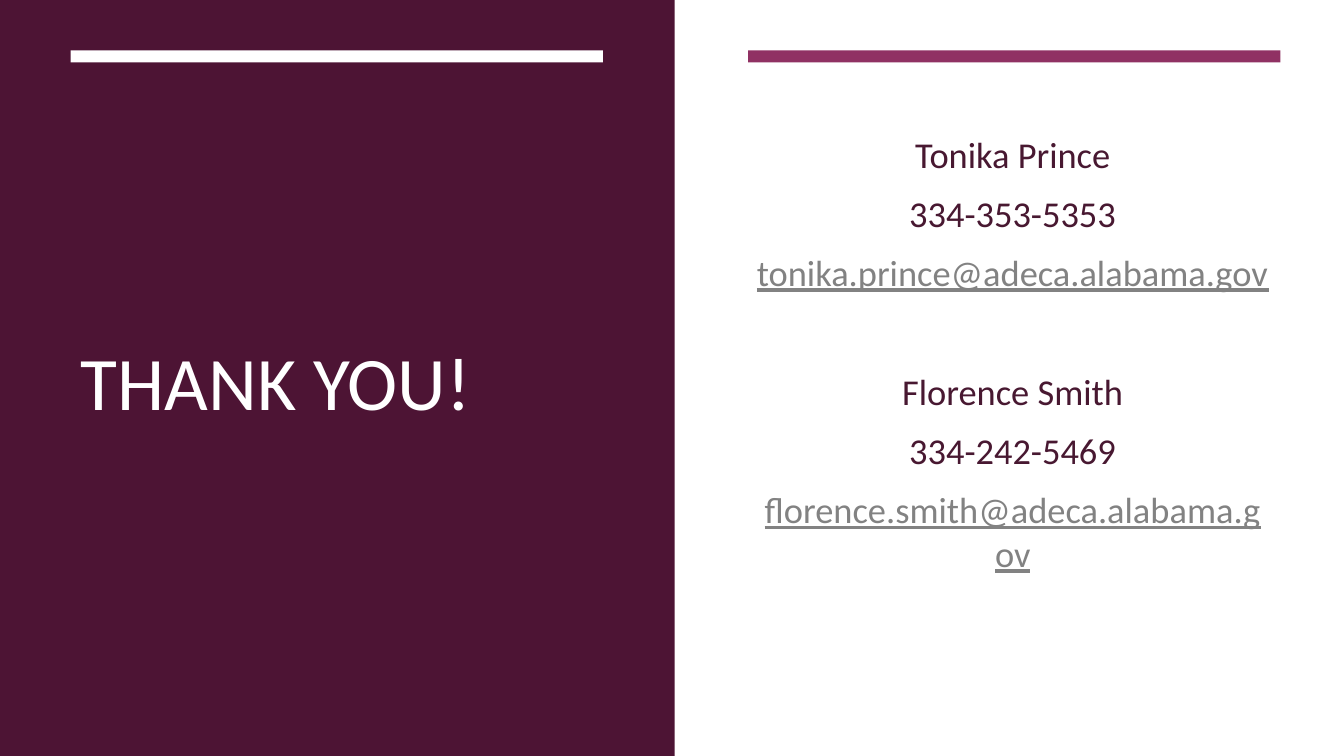
"""Build a closing slide with a thank-you panel and two contacts."""
from pptx import Presentation, util as u
from pptx.dml.color import RGBColor
from pptx.enum import shapes, text
from lxml import etree

PX = 9144


def color(target, hex_code):
    target.rgb = RGBColor.from_string(hex_code)


def place(sp, *box):
    for name, value in zip(("left", "top", "width", "height"), box):
        setattr(sp, name, u.Emu(value * PX))


prs = Presentation()
prs.slide_width, prs.slide_height = u.Emu(1333 * PX), u.Emu(750 * PX)
s = prs.slides.add_slide(prs.slide_layouts[1])
title, body = s.placeholders

panels = [
    ((0, 0, 1333, 750), "FFFFFF"),
    ((0, 0, 669, 750), "4D1434"),
    ((70, 50, 528, 12), "FFFFFF"),
    ((742, 50, 528, 12), "903163"),
]
for box, fill in panels:
    sp = s.shapes.add_shape(shapes.MSO_SHAPE.RECTANGLE, 0, 0, 0, 0)
    place(sp, *box)
    sp.shadow.inherit = False
    sp.fill.solid()
    color(sp.fill.fore_color, fill)
    sp.line.fill.background()

place(title, 70, 113, 528, 528)
place(body, 739, 113, 531, 475)
frame_format = {
    "word_wrap": True,
    "auto_size": text.MSO_AUTO_SIZE.NONE,
    "vertical_anchor": text.MSO_ANCHOR.MIDDLE,
}
for sp in (title, body):
    s.shapes._spTree.append(sp._element)
    for name, value in frame_format.items():
        setattr(sp.text_frame, name, value)

DARK, LINK = "481831", "828282"
left, center = text.PP_ALIGN.LEFT, text.PP_ALIGN.CENTER
lines = [(title, "THANK YOU!", 54, "FFFFFF", left, 0, 0)]
contacts = [
    ("Tonika Prince", "334-353-5353", "tonika.prince@adeca.alabama.gov", 5),
    ("Florence Smith", "334-242-5469", "florence.smith@adeca.alabama.gov", 48),
]
for name, phone, email, gap in contacts:
    lines += [
        (body, name, 26, DARK, center, gap, 6),
        (body, phone, 26, DARK, center, 5, 6),
        (body, email, 26, LINK, center, 5, 6),
    ]

for sp, words, size, ink, align, before, after in lines:
    tf = sp.text_frame
    p = tf.add_paragraph() if tf.text else tf.paragraphs[0]
    para_format = {
        "alignment": align,
        "space_before": u.Pt(before),
        "space_after": u.Pt(after),
    }
    for name, value in para_format.items():
        setattr(p, name, value)
    pPr = p._p.get_or_add_pPr()
    pPr.set("marL", "0")
    pPr.set("indent", "0")
    etree.SubElement(pPr, "{http://schemas.openxmlformats.org/drawingml/2006/main}buNone")
    r = p.add_run()
    r.text = words
    font_format = {"name": "Calibri", "size": u.Pt(size), "underline": ink == LINK}
    for name, value in font_format.items():
        setattr(r.font, name, value)
    color(r.font.color, ink)

prs.save("out.pptx")
